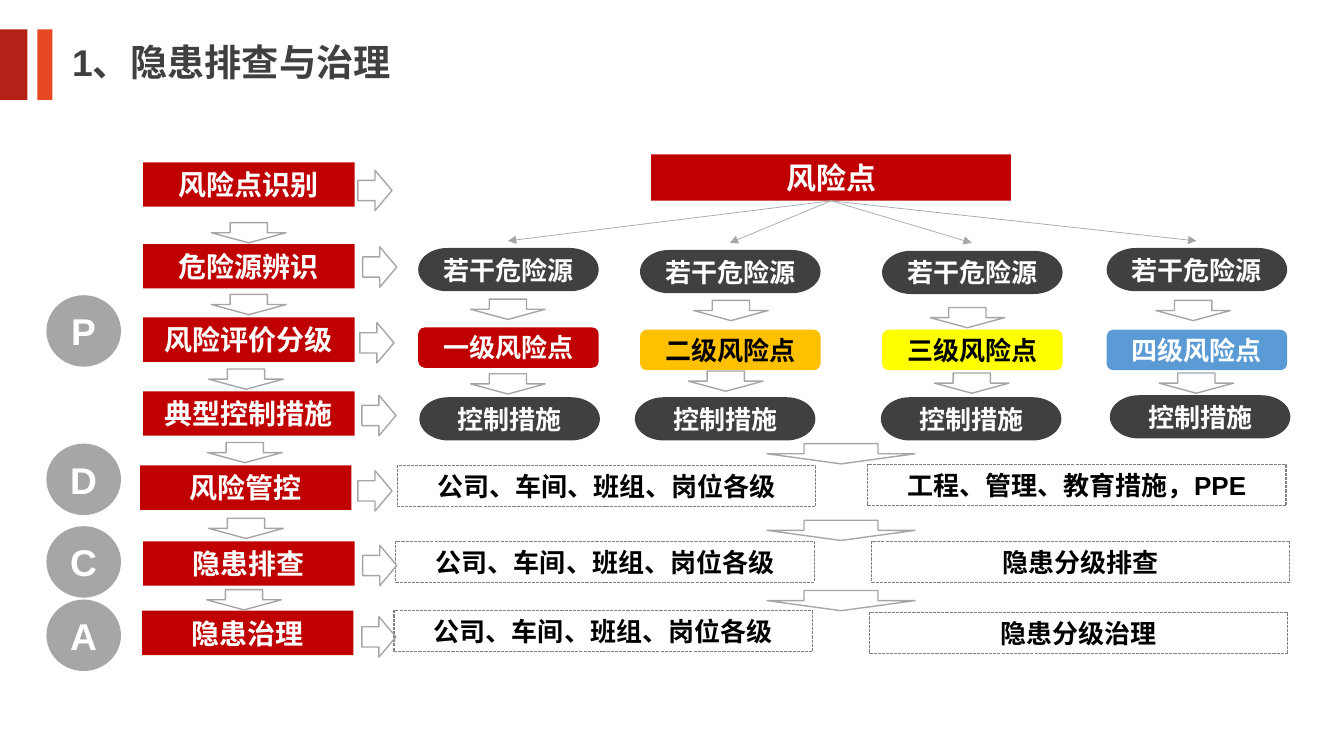
"""Build the slide on finding and treating hidden dangers as a PDCA flow."""
import pptx
import pptx.dml.color
import pptx.enum.dml
import pptx.enum.shapes
import pptx.enum.text
import pptx.oxml
import pptx.oxml.ns
import pptx.util

Cm = pptx.util.Cm
KIND = pptx.enum.shapes.MSO_SHAPE
RED, DARK, GREY, WHITE, BLACK = "C00000", "404040", "A6A6A6", "FFFFFF", "000000"


def paint(target, color):
    if hasattr(target, "solid"):
        target.solid()
        target = target.fore_color
    target.rgb = pptx.dml.color.RGBColor.from_string(color)


def add_block(kind, left, top, width, height, fill=None, line=None, text="", size=18.6, color=WHITE):
    block = slide.shapes.add_shape(kind, Cm(left), Cm(top), Cm(width), Cm(height))
    block.shadow.inherit = False
    if fill:
        paint(block.fill, fill)
    else:
        block.fill.background()
    if line:
        paint(block.line.color, line)
        block.line.width = pptx.util.Pt(1)
    else:
        block.line.fill.background()
    if text:
        frame = block.text_frame
        frame_format = {"margin_top": 0, "margin_bottom": 0, "margin_left": 0, "margin_right": 0,
                        "word_wrap": True, "vertical_anchor": pptx.enum.text.MSO_ANCHOR.MIDDLE}
        for name, value in frame_format.items():
            setattr(frame, name, value)
        paragraph = frame.paragraphs[0]
        paragraph.alignment = pptx.enum.text.PP_ALIGN.CENTER
        run = paragraph.add_run()
        run.text = text
        for name, value in {"name": "Arial", "size": pptx.util.Pt(size), "bold": True}.items():
            setattr(run.font, name, value)
        paint(run.font.color, color)
    return block


deck = pptx.Presentation()
deck.slide_width, deck.slide_height = Cm(33.87), Cm(19.05)
slide = deck.slides.add_slide(deck.slide_layouts[6])

add_block(KIND.RECTANGLE, 0, 0.74, 0.69, 1.78, "B52116")
add_block(KIND.RECTANGLE, 0.94, 0.74, 0.38, 1.78, "E64823")

heading = slide.shapes.add_textbox(Cm(1.57), Cm(0.86), Cm(8.69), Cm(1.4))
heading.text_frame.word_wrap = True
heading_run = heading.text_frame.paragraphs[0].add_run()
heading_run.text = "1、隐患排查与治理"
for name, value in {"name": "Arial", "size": pptx.util.Pt(26.6), "bold": True}.items():
    setattr(heading_run.font, name, value)
paint(heading_run.font.color, DARK)

steps = [
    ("风险点识别", 3.61, 4.09),
    ("危险源辨识", 3.61, 6.15),
    ("风险评价分级", 3.61, 8),
    ("典型控制措施", 3.61, 9.86),
    ("风险管控", 3.53, 11.73),
    ("隐患排查", 3.61, 13.64),
    ("隐患治理", 3.58, 15.39),
]
for step, left, top in steps:
    add_block(KIND.RECTANGLE, left, top, 5.33, 1.12, RED, text=step, size=20)

risk_point = add_block(KIND.RECTANGLE, 16.41, 3.89, 9.07, 1.17, RED, text="风险点", size=21.4)

hazards = [(10.54, 6.25), (16.13, 6.3), (22.23, 6.32), (27.89, 6.25)]
for left, top in hazards:
    add_block(KIND.FLOWCHART_TERMINATOR, left, top, 4.55, 1.09, DARK, text="若干危险源")

levels = [
    ("一级风险点", 8.25, RED, WHITE),
    ("二级风险点", 8.31, "FFC000", BLACK),
    ("三级风险点", 8.31, "FFFF00", BLACK),
    ("四级风险点", 8.31, "5B9BD5", WHITE),
]
for (left, hazard_top), (level, top, fill, color) in zip(hazards, levels):
    add_block(KIND.ROUNDED_RECTANGLE, left, top, 4.55, 1.02, fill, text=level, color=color)

for left, top in [(10.57, 10.01), (16, 10.01), (22.2, 10.01), (27.97, 9.96)]:
    add_block(KIND.FLOWCHART_TERMINATOR, left, top, 4.55, 1.09, DARK, text="控制措施")

duties = [
    ("公司、车间、班组、岗位各级", 10.01, 11.73),
    ("公司、车间、班组、岗位各级", 9.98, 13.64),
    ("公司、车间、班组、岗位各级", 9.93, 15.39),
    ("工程、管理、教育措施，PPE", 21.87, 11.71),
    ("隐患分级排查", 21.97, 13.64),
    ("隐患分级治理", 21.92, 15.44),
]
for duty, left, top in duties:
    duty_box = add_block(KIND.RECTANGLE, left, top, 10.54, 1.04, WHITE, "808080", duty, color=BLACK)
    duty_box.line.width = pptx.util.Pt(0.75)
    duty_box.line.dash_style = pptx.enum.dml.MSO_LINE.SQUARE_DOT

for top in (11.18, 13.11, 14.88):
    add_block(KIND.DOWN_ARROW, 19.33, top, 3.73, 0.51, line=GREY)

down_arrows = [
    (11.86, 7.54), (17.48, 7.57), (23.44, 7.75), (29.13, 7.57),
    (11.86, 9.42), (17.35, 9.35), (23.55, 9.4), (29.21, 9.4),
    (5.33, 5.61), (5.33, 7.42), (5.26, 9.3), (5.23, 11.15), (5.26, 13.06), (5.21, 14.86),
]
for left, top in down_arrows:
    add_block(KIND.DOWN_ARROW, left, top, 1.88, 0.51, line=GREY)

right_arrows = [(9.02, 4.29), (9.14, 6.22), (9.07, 8.13), (9.12, 9.96),
                (9.02, 11.86), (9.14, 13.74), (9.12, 15.54)]
for left, top in right_arrows:
    add_block(KIND.RIGHT_ARROW, left, top, 0.86, 1.02, line=GREY)

for phase, top in [("P", 7.44), ("D", 11.18), ("C", 13.26), ("A", 15.11)]:
    add_block(KIND.OVAL, 1.17, top, 1.88, 1.8, GREY, text=phase, size=26.6)

for end_x, end_y in [(12.8, 6.07), (18.39, 6.12), (24.49, 6.12), (30.15, 6.07)]:
    branch = slide.shapes.add_connector(
        pptx.enum.shapes.MSO_CONNECTOR.STRAIGHT, Cm(20.93), Cm(5.13), Cm(end_x), Cm(end_y))
    branch.begin_connect(risk_point, 2)
    paint(branch.line.color, GREY)
    branch.line.width = pptx.util.Pt(0.5)
    namespace = pptx.oxml.ns.nsdecls("a")
    branch.line._get_or_add_ln().append(pptx.oxml.parse_xml(f'<a:tailEnd {namespace} type="triangle"/>'))
    branch._element.spPr.append(pptx.oxml.parse_xml(f"<a:effectLst {namespace}/>"))

deck.save("out.pptx")
